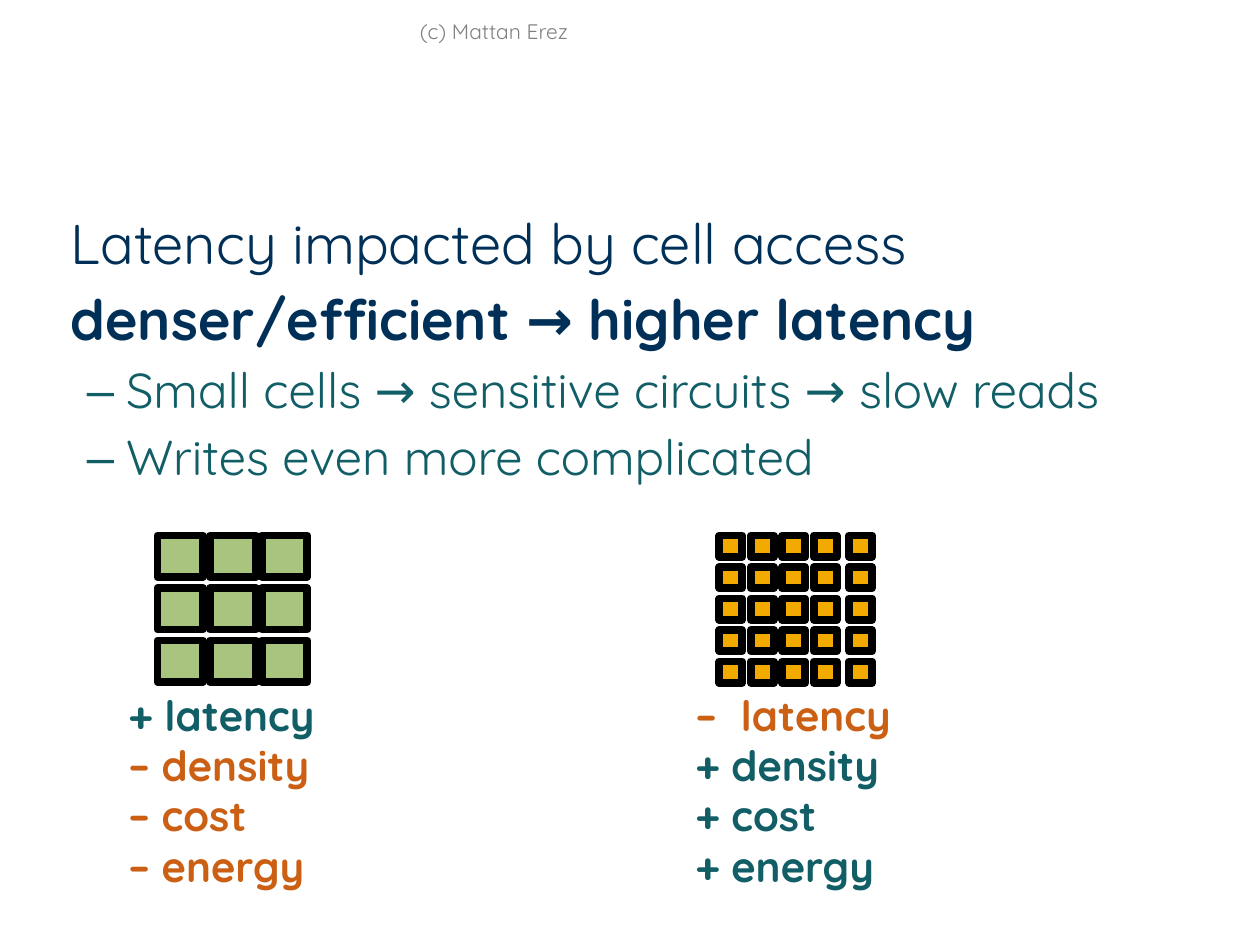
from lxml import etree
from pptx import Presentation
from pptx.dml.color import RGBColor
from pptx.enum import shapes, text
from pptx.oxml import ns
from pptx.util import Inches, Pt

FACE = "Quicksand"
HUES = {"navy": "003057", "teal": "115E67", "rust": "CB6015", "green": "A9C47F",
        "gold": "F2A900", "black": "000000", "gray": "808080"}


def hue(name):
    return RGBColor.from_string(HUES[name])


def style(par, size, color, bold=False):
    font = par.font
    font.name, font.size, font.bold = FACE, Pt(size), bold
    font.color.rgb = hue(color)


def add_tag(par, tag, **attrs):
    return etree.SubElement(par._p.get_or_add_pPr(), ns.qn(tag), attrs)


def set_indent(par, left, first):
    props = par._p.get_or_add_pPr()
    props.set("marL", str(Inches(left)))
    props.set("indent", str(Inches(first)))


def next_par(frame, i):
    return frame.paragraphs[0] if i == 0 else frame.add_paragraph()


def fill_body(body, left, top, width, height):
    body.left, body.top = Inches(left), Inches(top)
    body.width, body.height = Inches(width), Inches(height)
    frame = body.text_frame
    frame.margin_left = frame.margin_right = frame.margin_top = frame.margin_bottom = 0
    frame.auto_size = text.MSO_AUTO_SIZE.NONE
    frame.vertical_anchor = text.MSO_ANCHOR.TOP
    lines = [("Latency impacted by cell access", 0, False),
             ("denser/efficient → higher latency", 0, True),
             ("Small cells → sensitive circuits → slow reads", 1, False),
             ("Writes even more complicated", 1, False)]
    for i, (line, level, bold) in enumerate(lines):
        par = next_par(frame, i)
        par.text, par.level = line, level
        par.line_spacing = 0.99
        par.space_before = Pt(0 if i == 0 else 4.8 if level else 5.2)
        if level:
            set_indent(par, 0.5, -0.31)
            color = add_tag(par, "a:buClr")
            etree.SubElement(color, ns.qn("a:srgbClr"), val=HUES["teal"])
            add_tag(par, "a:buChar", char="–")
            style(par, 28, "teal", bold)
        else:
            set_indent(par, 0.06, 0)
            add_tag(par, "a:buNone")
            style(par, 32, "navy", bold)


def add_grid(tree, top, cols, rows, step, size, color):
    """Draw a cell at each left edge in cols, row after row."""
    for row in range(rows):
        for left in cols:
            cell = tree.add_shape(shapes.MSO_SHAPE.RECTANGLE, Inches(left),
                                  Inches(top + row * step), Inches(size[0]), Inches(size[1]))
            cell.shadow.inherit = False
            cell.fill.solid()
            cell.fill.fore_color.rgb = hue(color)
            cell.line.color.rgb = hue("black")
            cell.line.width = Pt(4.5)


def add_list(tree, left, top, width, height, lines):
    box = tree.add_textbox(Inches(left), Inches(top), Inches(width), Inches(height))
    box.text_frame.word_wrap = False
    for i, line in enumerate(lines):
        par = next_par(box.text_frame, i)
        par.text = line
        if "\t" in line:
            tabs = add_tag(par, "a:tabLst")
            etree.SubElement(tabs, ns.qn("a:tab"), pos=str(Inches(0.36)), algn="l")
        style(par, 24, "teal" if line.startswith("+") else "rust", True)


def add_credit(tree, left, top, width, height):
    box = tree.add_textbox(Inches(left), Inches(top), Inches(width), Inches(height))
    frame = box.text_frame
    frame.word_wrap = True
    frame.vertical_anchor = text.MSO_ANCHOR.MIDDLE
    par = frame.paragraphs[0]
    par.text = "(c) Mattan Erez"
    par.alignment = text.PP_ALIGN.CENTER
    style(par, 12, "gray")


def main():
    deck = Presentation()
    deck.slide_width, deck.slide_height = Inches(10), Inches(7.5)
    slide = deck.slides.add_slide(deck.slide_layouts[1])
    tree = slide.shapes
    title = tree.title._element
    title.getparent().remove(title)

    fill_body(slide.placeholders[1], 0.5, 1.68, 9.33, 2.5)
    add_grid(tree, 4.25, [1.25, 1.67, 2.08], 3, 1.25 / 3, (0.36, 0.33), "green")
    add_grid(tree.add_group_shape().shapes, 4.25, [5.71, 5.96, 6.21, 6.46, 6.74],
             5, 0.25, (0.18, 0.17), "gold")
    add_list(tree, 0.92, 5.42, 1.73, 1.72,
             ["+ latency", "– density", "– cost", "– energy"])
    add_list(tree, 5.42, 5.42, 1.79, 1.72,
             ["–\tlatency", "+ density", "+ cost", "+ energy"])
    add_credit(tree, 0.92, 0, 6, 0.5)
    deck.save("out.pptx")


if __name__ == "__main__":
    main()
